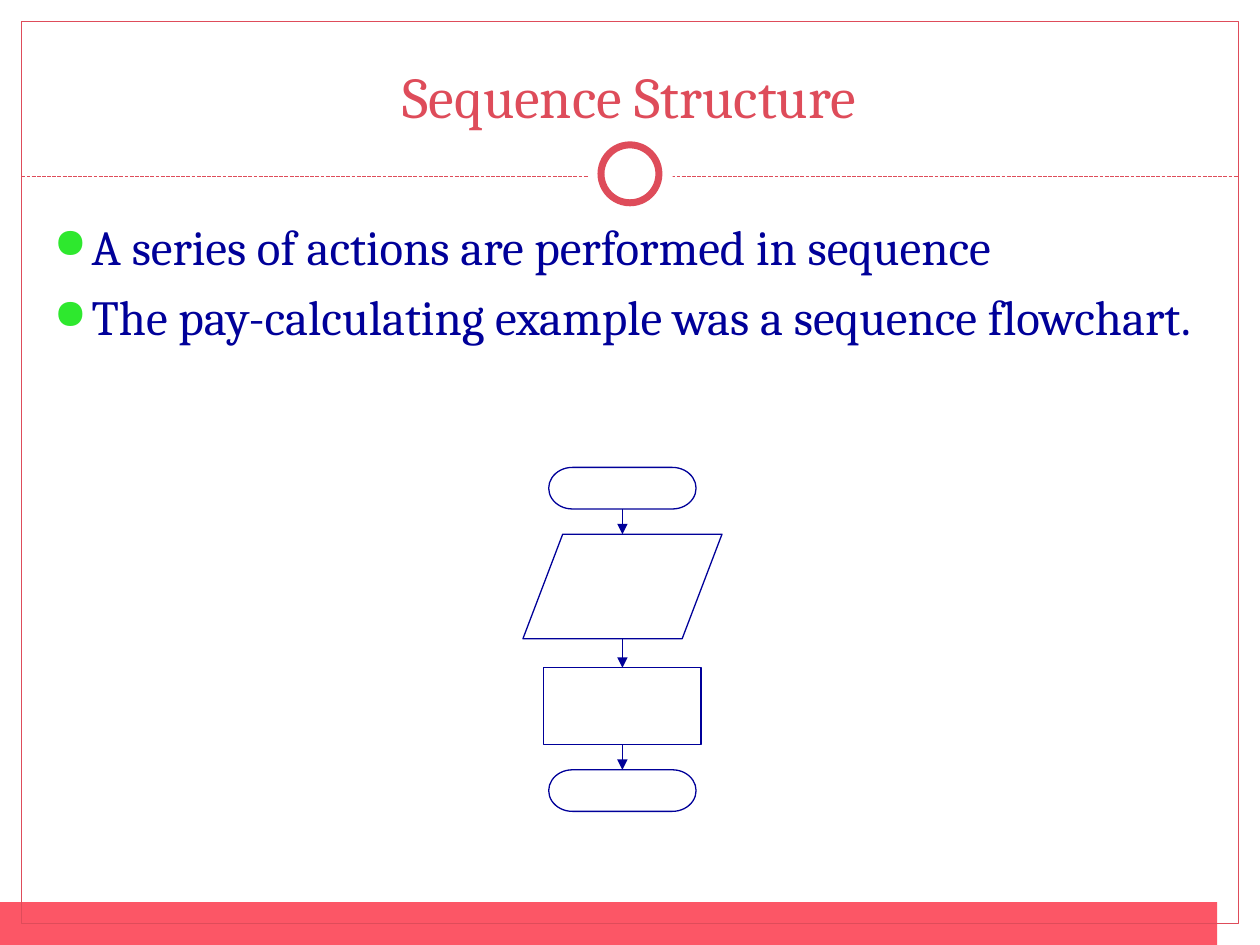
import pptx
import pptx.dml.color
import pptx.enum.dml
import pptx.enum.shapes
import pptx.enum.text
import pptx.oxml
import pptx.oxml.ns
import pptx.util
from dataclasses import dataclass

Inches = pptx.util.Inches
Pt = pptx.util.Pt
SHAPE = pptx.enum.shapes.MSO_SHAPE
ALIGN = pptx.enum.text.PP_ALIGN
ANCHOR = pptx.enum.text.MSO_ANCHOR


@dataclass(frozen=True)
class Theme:
    font: str = "Cambria"
    red: str = "DE4C5A"
    bar: str = "FC5666"
    white: str = "FFFFFF"
    navy: str = "000099"
    green: str = "2EE82E"
    title_size: float = 33
    body_size: float = 28
    thin: float = 0.75
    ring: float = 4


THEME = Theme()


def color(code):
    return pptx.dml.color.RGBColor.from_string(code)


def apply_format(target, values):
    for name, value in values.items():
        setattr(target, name, value)


def add_xml(parent, tag, **attributes):
    element = pptx.oxml.ns.qn(tag)
    return parent.append(parent.makeelement(element, attributes))


def add_box(page, kind, left, top, width, height, fill=None, line=None, weight=THEME.thin):
    box = page.shapes.add_shape(
        kind, Inches(left), Inches(top), Inches(width), Inches(height))
    box.shadow.inherit = False
    if fill:
        box.fill.solid()
        box.fill.fore_color.rgb = color(fill)
    else:
        box.fill.background()
    if line:
        box.line.color.rgb = color(line)
        box.line.width = Pt(weight)
    else:
        box.line.fill.background()
    return box


def add_line(page, start, end, line):
    connector = page.shapes.add_connector(
        pptx.enum.shapes.MSO_CONNECTOR.STRAIGHT, *map(Inches, start + end))
    connector.line.color.rgb = color(line)
    connector.line.width = Pt(THEME.thin)
    return connector


def drop_shadow(connector):
    add_xml(connector._element.spPr, "a:effectLst")


def add_arrow(page, start, end):
    arrow = add_line(page, start, end, THEME.navy)
    add_xml(arrow.line._get_or_add_ln(), "a:tailEnd", type="triangle")
    drop_shadow(arrow)
    return arrow


def add_text(page, left, top, width, height, lines, frame_format, para_format, size, ink):
    box = page.shapes.add_textbox(
        Inches(left), Inches(top), Inches(width), Inches(height))
    frame = box.text_frame
    apply_format(frame, {"word_wrap": True, **frame_format})
    for index, line in enumerate(lines):
        para = frame.add_paragraph() if index else frame.paragraphs[0]
        apply_format(para, para_format)
        span = para.add_run()
        span.text = line
        apply_format(span.font, {"name": THEME.font, "size": Pt(size)})
        span.font.color.rgb = color(ink)
    return frame


def add_bullet(para):
    properties = para._p.get_or_add_pPr()
    properties.set("marL", str(Inches(0.3)))
    properties.set("indent", str(Inches(-0.3)))
    bullet_color = properties.makeelement(pptx.oxml.ns.qn("a:buClr"), {})
    add_xml(bullet_color, "a:srgbClr", val=THEME.green)
    properties.append(bullet_color)
    add_xml(properties, "a:buSzPct", val="85000")
    add_xml(properties, "a:buChar", char="●")


def add_frame(page):
    # Bottom bar, border, dashed rule and the ring that interrupts it
    add_box(page, SHAPE.RECTANGLE, 0, 7.16, 9.66, 0.34, fill=THEME.bar)
    add_box(page, SHAPE.RECTANGLE, 0.17, 0.17, 9.66, 7.16, line=THEME.red)
    rule = add_line(page, (0.17, 1.4), (9.83, 1.4), THEME.red)
    rule.line.dash_style = pptx.enum.dml.MSO_LINE.SQUARE_DOT
    drop_shadow(rule)
    add_box(page, SHAPE.OVAL, 4.67, 1.05, 0.67, 0.67, fill=THEME.white)
    add_box(page, SHAPE.OVAL, 4.77, 1.15, 0.46, 0.46,
            fill=THEME.white, line=THEME.red, weight=THEME.ring)


def add_flowchart(page):
    center = 4.94
    steps = [
        (SHAPE.FLOWCHART_TERMINATOR, 3.71, 1.17, 0.33),
        (SHAPE.FLOWCHART_DATA, 4.24, 1.58, 0.83),
        (SHAPE.RECTANGLE, 5.3, 1.25, 0.61),
        (SHAPE.FLOWCHART_TERMINATOR, 6.11, 1.17, 0.33),
    ]
    boxes = [add_box(page, kind, center - width / 2, top, width, height, line=THEME.navy)
             for kind, top, width, height in steps]

    # Arrows join consecutive steps; a parallelogram numbers its sides differently
    for index in range(len(steps) - 1):
        kind, top, _, height = steps[index]
        next_kind, next_top = steps[index + 1][:2]
        arrow = add_arrow(page, (center, top + height), (center, next_top))
        if kind != SHAPE.FLOWCHART_DATA:
            arrow.begin_connect(boxes[index], 2)
        if next_kind != SHAPE.FLOWCHART_DATA:
            arrow.end_connect(boxes[index + 1], 0)


def main():
    deck = pptx.Presentation()
    apply_format(deck, {"slide_width": Inches(10), "slide_height": Inches(7.5)})
    page = deck.slides.add_slide(deck.slide_layouts[6])

    add_frame(page)

    # Title and bullets
    add_text(page, 0.33, 0.25, 9.33, 0.83, ["Sequence Structure"],
             {"vertical_anchor": ANCHOR.BOTTOM}, {"alignment": ALIGN.CENTER},
             THEME.title_size, THEME.red)
    body = add_text(page, 0.33, 1.67, 9.3, 5,
                    ["A series of actions are performed in sequence",
                     "The pay-calculating example was a sequence flowchart."],
                    {"vertical_anchor": ANCHOR.TOP},
                    {"alignment": ALIGN.LEFT, "space_before": Pt(6.5)},
                    THEME.body_size, THEME.navy)
    for para in body.paragraphs:
        add_bullet(para)

    add_flowchart(page)
    deck.save("out.pptx")


if __name__ == "__main__":
    main()
